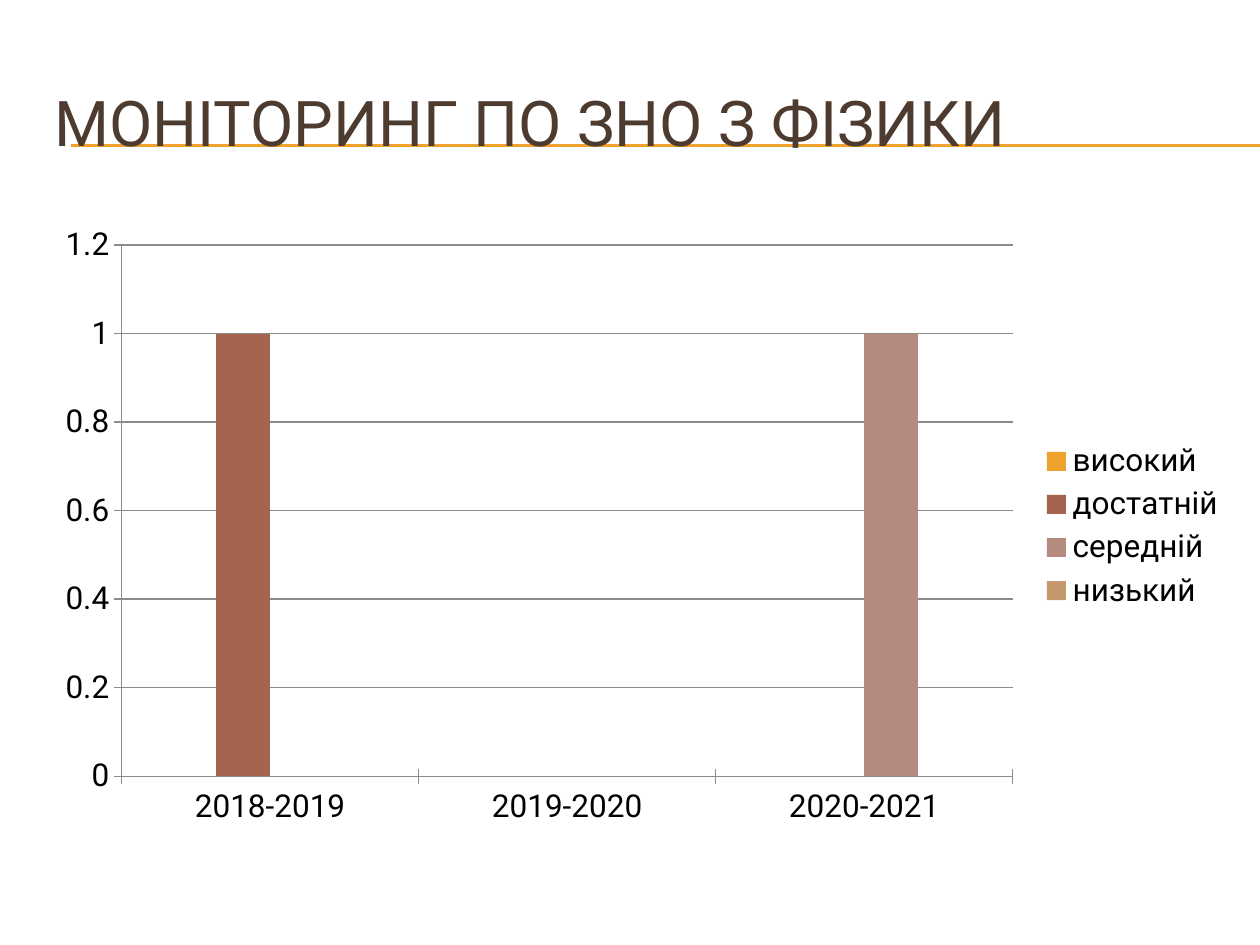
from lxml.etree import SubElement
from pptx import Presentation
from pptx.chart.data import CategoryChartData
from pptx.dml.color import RGBColor
from pptx.enum.chart import XL_CHART_TYPE, XL_LEGEND_POSITION, XL_TICK_MARK
from pptx.enum.shapes import MSO_CONNECTOR
from pptx.enum.text import MSO_ANCHOR, PP_ALIGN
from pptx.oxml.ns import qn
from pptx.util import Inches, Pt

COLUMN = XL_CHART_TYPE.COLUMN_CLUSTERED
RIGHT = XL_LEGEND_POSITION.RIGHT
CROSS = XL_TICK_MARK.CROSS
STRAIGHT = MSO_CONNECTOR.STRAIGHT
MIDDLE = MSO_ANCHOR.MIDDLE
LEFT = PP_ALIGN.LEFT

BLACK = RGBColor(0x00, 0x00, 0x00)
BROWN = RGBColor(0x4E, 0x3B, 0x30)
GREY = RGBColor(0x8B, 0x8B, 0x8B)
GOLD = RGBColor(0xF0, 0xA2, 0x2E)
RUST = RGBColor(0xA5, 0x64, 0x4E)
ROSE = RGBColor(0xB5, 0x8B, 0x80)
SAND = RGBColor(0xC3, 0x98, 0x6D)

TITLE = "МОНІТОРИНГ ПО ЗНО З ФІЗИКИ"
YEARS = ["2018-2019", "2019-2020", "2020-2021"]
LEVELS = [
    ("високий", [None, None, None], GOLD),
    ("достатній", [1, None, None], RUST),
    ("середній", [None, None, 1], ROSE),
    ("низький", [None, None, None], SAND),
]

WIDE, HIGH = Inches(10), Inches(7.5)
SIDE, SPAN = Inches(0.33), Inches(9.5)
RULE_X = Inches(0.56)
RULES = [Inches(1.15), Inches(1.16)]


def apply(item, **values):
    for name, value in values.items():
        setattr(item, name, value)


def paint(line, color, width):
    line.color.rgb = color
    line.width = Pt(width)


def style(font, size, color):
    apply(font, name="Roboto", size=Pt(size), bold=False)
    font.color.rgb = color


deck = Presentation()
apply(deck, slide_width=WIDE, slide_height=HIGH)
slide = deck.slides.add_slide(deck.slide_layouts[5])

title = slide.shapes.title
apply(title, left=SIDE, top=Inches(0.5), width=SPAN, height=Inches(0.92))
frame = title.text_frame
apply(frame, text=TITLE, vertical_anchor=MIDDLE, word_wrap=True)
para = frame.paragraphs[0]
para.alignment = LEFT
style(para.runs[0].font, 36, BROWN)

for y in RULES:
    rule = slide.shapes.add_connector(STRAIGHT, RULE_X, y, WIDE, y)
    paint(rule.line, GOLD, 0.75)
    SubElement(rule.element.spPr, qn("a:effectLst"))
    title.element.addprevious(rule.element)

data = CategoryChartData()
data.categories = YEARS
for name, values, color in LEVELS:
    data.add_series(name, values)
chart = slide.shapes.add_chart(
    COLUMN, SIDE, Inches(1.7), SPAN, Inches(4.95), data).chart
apply(chart, has_title=False, has_legend=True)
style(chart.font, 18, BLACK)
apply(chart.legend, position=RIGHT, include_in_layout=False)

plot = chart.plots[0]
apply(plot, gap_width=150, overlap=0, vary_by_categories=False)
for series, (name, values, color) in zip(plot.series, LEVELS):
    series.format.fill.solid()
    series.format.fill.fore_color.rgb = color

for axis in (chart.category_axis, chart.value_axis):
    axis.major_tick_mark = CROSS
    paint(axis.format.line, GREY, 0.75)
scale = chart.value_axis
apply(scale, minimum_scale=0, maximum_scale=1.2, major_unit=0.2,
      has_major_gridlines=True)
paint(scale.major_gridlines.format.line, GREY, 0.75)

deck.save("out.pptx")
